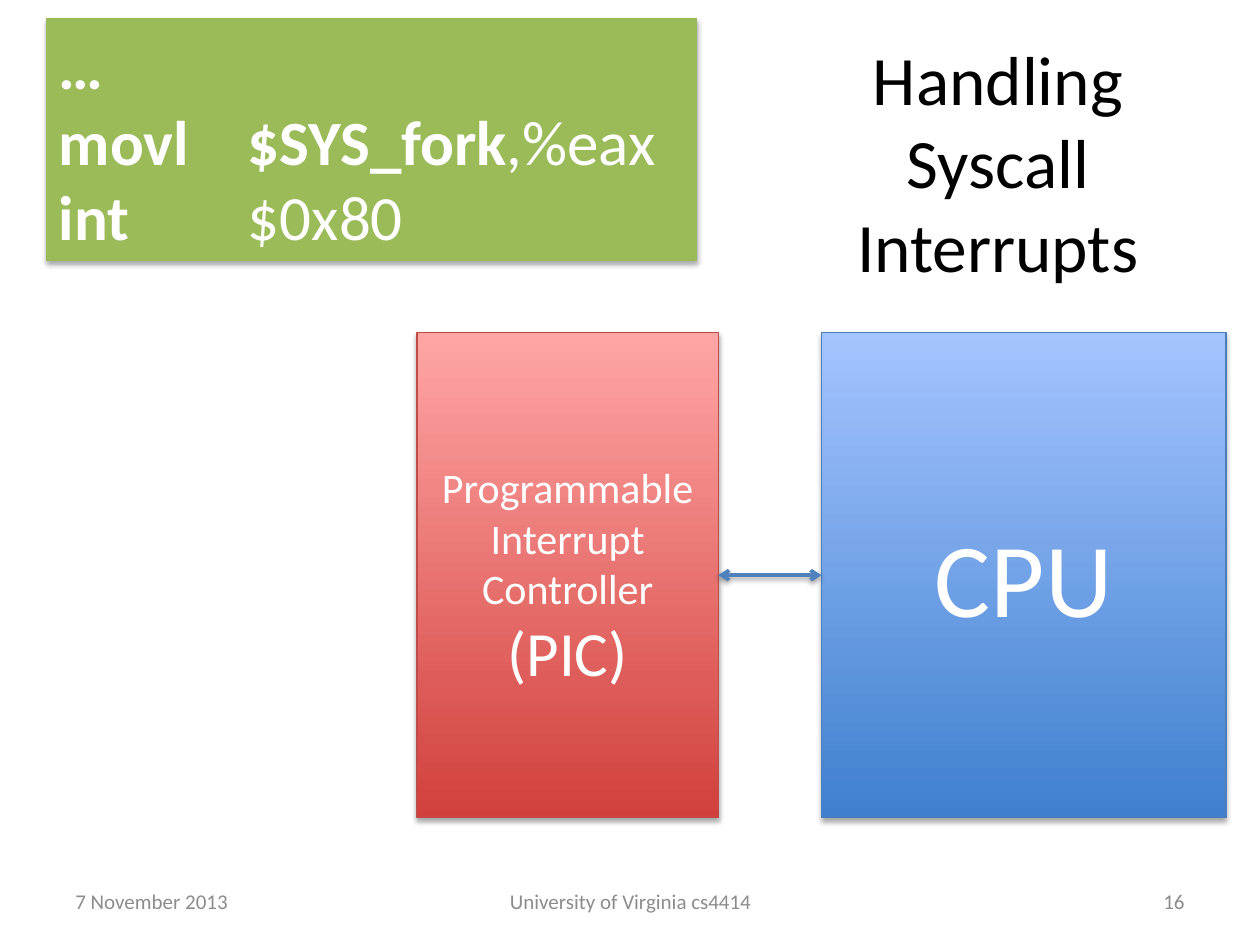
from lxml.etree import SubElement
from pptx import Presentation
from pptx.dml.color import RGBColor
from pptx.enum.shapes import MSO_CONNECTOR, MSO_SHAPE
from pptx.enum.text import MSO_ANCHOR, PP_ALIGN
from pptx.oxml.ns import qn
from pptx.util import Inches, Pt

FONT = "Calibri"
COLORS = {
    "title": "000000", "footer": "8C8C8C", "label": "FFFFFF", "shadow": "000000",
    "code": "9BBB59", "code_edge": "98B955",
    "cpu_bottom": "3F80CE", "cpu_top": "A4C4FF", "cpu_edge": "4B7EBC",
    "pic_bottom": "D1403C", "pic_top": "FFA6A5", "pic_edge": "BF4C48",
    "bus": "4F81BD",
}
RIGHT_EDGE = 9.73
CHIP_TOP, CHIP_HEIGHT = 2.64, 3.85


def rgb(name):
    return RGBColor.from_string(COLORS[name])


def add_shadow(properties, distance, opacity):
    """Put a soft downward shadow in the shape properties; opacity in percent."""
    effects = properties.find(qn("a:effectLst"))
    if effects is None:
        effects = SubElement(properties, qn("a:effectLst"))
    shadow = SubElement(effects, qn("a:outerShdw"), blurRad=str(Pt(3.1)),
                        dist=str(Pt(distance)), dir="5400000", rotWithShape="0")
    color = SubElement(shadow, qn("a:srgbClr"), val=COLORS["shadow"])
    SubElement(color, qn("a:alpha"), val=str(opacity * 1000))


def write_lines(shape, lines, color, align):
    """Fill the shape with (size, [(text, bold), ...]) paragraphs."""
    frame = shape.text_frame
    frame.word_wrap = True
    frame.vertical_anchor = MSO_ANCHOR.MIDDLE
    for index, (size, pieces) in enumerate(lines):
        paragraph = frame.add_paragraph() if index else frame.paragraphs[0]
        paragraph.alignment = align
        paragraph.font.name = FONT
        paragraph.font.size = Pt(size)
        paragraph.font.color.rgb = rgb(color)
        paragraph._p.get_or_add_pPr().set("defTabSz", str(Inches(0.5)))
        for text, bold in pieces:
            run = paragraph.add_run()
            run.text = text
            run.font.name = FONT
            run.font.size = Pt(size)
            run.font.bold = bold
            run.font.color.rgb = rgb(color)


def add_label(slide, box, text, size, color, align):
    label = slide.shapes.add_textbox(*map(Inches, box))
    write_lines(label, [(size, [(text, False)])], color, align)


def add_block(slide, box, edge, lines, align):
    block = slide.shapes.add_shape(MSO_SHAPE.RECTANGLE, *map(Inches, box))
    block.shadow.inherit = False
    block.line.color.rgb = rgb(edge)
    block.line.width = Pt(0.75)
    add_shadow(block._element.spPr, 1.8, 35)
    write_lines(block, lines, "label", align)
    return block


def add_code(slide):
    lines = [
        (36, [("…", True)]),
        (36, [("movl\t$SYS_fork", True), (",%eax", False)]),
        (36, [("int", True), (" \t\t$0x80", False)]),
    ]
    code = add_block(slide, (0.37, 0.15, 5.16, 1.92), "code_edge", lines, PP_ALIGN.LEFT)
    code.fill.solid()
    code.fill.fore_color.rgb = rgb("code")


def add_chip(slide, left, width, name, lines):
    """Add a block shaded from its bottom colour up to its top colour."""
    chip = add_block(slide, (left, CHIP_TOP, width, CHIP_HEIGHT), f"{name}_edge",
                     lines, PP_ALIGN.CENTER)
    chip.fill.gradient()
    chip.fill.gradient_angle = 90
    for stop, end in zip(chip.fill.gradient_stops, ("bottom", "top")):
        stop.color.rgb = rgb(f"{name}_{end}")
    return chip


def add_bus(slide, left_chip, right_chip):
    """Join the facing sides of two chips with a double-headed arrow."""
    bus = slide.shapes.add_connector(MSO_CONNECTOR.ELBOW, 0, 0, 0, 0)
    bus.begin_connect(left_chip, 3)
    bus.end_connect(right_chip, 1)
    bus.line.color.rgb = rgb("bus")
    bus.line.width = Pt(2)
    line = bus.line._get_or_add_ln()
    for end in ("a:headEnd", "a:tailEnd"):
        SubElement(line, qn(end), type="arrow")
    add_shadow(bus._element.spPr, 1.6, 38)


def main():
    deck = Presentation()
    deck.slide_width, deck.slide_height = Inches(10), Inches(7.5)
    slide = deck.slides.add_slide(deck.slide_layouts[6])

    add_label(slide, (6.11, 0.2, 3.62, 2.16), "Handling Syscall Interrupts", 39.6,
              "title", PP_ALIGN.CENTER)
    footers = [
        (0.5, 2.33, "7 November 2013", PP_ALIGN.LEFT),
        (3.42, 3.17, "University of Virginia cs4414", PP_ALIGN.CENTER),
        (7.17, 2.33, "16", PP_ALIGN.RIGHT),
    ]
    for left, width, text, align in footers:
        add_label(slide, (left, 6.95, width, 0.4), text, 12, "footer", align)

    add_code(slide)
    cpu_left = 6.52
    cpu = add_chip(slide, cpu_left, RIGHT_EDGE - cpu_left, "cpu",
                   [(60, [("CPU", False)])])
    pic = add_chip(slide, 3.31, 2.39, "pic", [
        (24, [("Programmable Interrupt Controller", False)]),
        (36, [("(PIC)", False)]),
    ])
    add_bus(slide, pic, cpu)
    deck.save("out.pptx")


if __name__ == "__main__":
    main()
